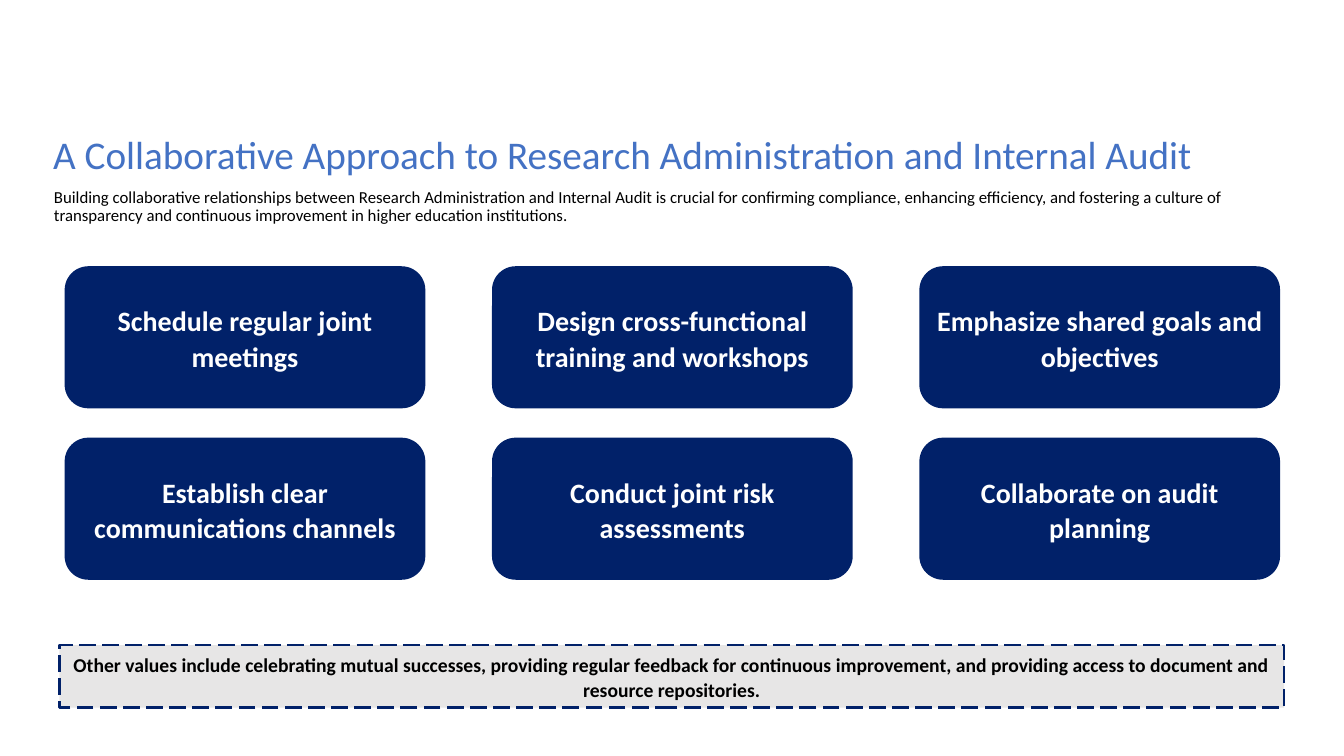
import pptx
import pptx.util
import pptx.dml.color
import pptx.enum.dml
import pptx.enum.shapes
import pptx.enum.text

Cm = pptx.util.Cm
Pt = pptx.util.Pt
Kind = pptx.enum.shapes.MSO_SHAPE
Align = pptx.enum.text.PP_ALIGN
Anchor = pptx.enum.text.MSO_ANCHOR

NAVY = "012169"
BLUE = "4472C4"
GREY = "E7E6E6"
WHITE = "FFFFFF"
BLACK = "000000"

STEPS = [
    ["Schedule regular joint meetings",
     "Design cross-functional training and workshops",
     "Emphasize shared goals and objectives"],
    ["Establish clear communications channels",
     "Conduct joint risk assessments",
     "Collaborate on audit planning"],
]


def color(code):
    return pptx.dml.color.RGBColor.from_string(code)


def write(shape, text, size, ink=BLACK, bold=False, align=Align.LEFT,
          anchor=Anchor.TOP, pitch=0.9, inset=0.25):
    frame = shape.text_frame
    frame.word_wrap = True
    frame.auto_size = pptx.enum.text.MSO_AUTO_SIZE.NONE
    frame.vertical_anchor = anchor
    frame.margin_left = frame.margin_right = Cm(0.25)
    frame.margin_top = frame.margin_bottom = Cm(inset)
    para = frame.paragraphs[0]
    para.alignment = align
    para.line_spacing = pitch
    para.space_before = Pt(0)
    run = para.add_run()
    run.text = text
    run.font.name = "Calibri"
    run.font.size = Pt(size)
    run.font.bold = bold
    run.font.color.rgb = color(ink)


def panel(slide, kind, box, text, fill, **style):
    shape = slide.shapes.add_shape(kind, *map(Cm, box))
    shape.shadow.inherit = False
    shape.fill.solid()
    shape.fill.fore_color.rgb = color(fill)
    shape.line.fill.background()
    write(shape, text, bold=True, align=Align.CENTER,
          anchor=Anchor.MIDDLE, pitch=1.06, **style)
    return shape


def header(slide, box):
    left, top, width, height = box
    title = slide.shapes.title
    title.left, title.top = Cm(left), Cm(top)
    title.width, title.height = Cm(width), Cm(height / 2)
    write(title, "A Collaborative Approach to Research Administration "
          "and Internal Audit", size=28, ink=BLUE,
          anchor=Anchor.MIDDLE, inset=0.13)
    intro = slide.shapes.add_textbox(
        Cm(left + 0.02), Cm(top + height / 2 + 0.05),
        Cm(width - 0.89), Cm(height / 2))
    write(intro, "Building collaborative relationships between Research "
          "Administration and Internal Audit is crucial for confirming "
          "compliance, enhancing efficiency, and fostering a culture of "
          "transparency and continuous improvement in higher education "
          "institutions.", size=12, inset=0.13)


def grid(slide, box, gap_x=1.68, gap_y=0.74):
    left, top, width, height = box
    rows, cols = len(STEPS), len(STEPS[0])
    wide = (width - gap_x * (cols - 1)) / cols
    high = (height - gap_y * (rows - 1)) / rows
    for row, texts in enumerate(STEPS):
        for col, text in enumerate(texts):
            place = (left + col * (wide + gap_x),
                     top + row * (high + gap_y), wide, high)
            panel(slide, Kind.ROUNDED_RECTANGLE, place, text, NAVY,
                  size=20, ink=WHITE)


def footer(slide, box):
    bar = panel(slide, Kind.RECTANGLE, box,
                "Other values include celebrating mutual successes, "
                "providing regular feedback for continuous improvement, "
                "and providing access to document and resource "
                "repositories.", GREY, size=14)
    bar.line.color.rgb = color(NAVY)
    bar.line.width = Pt(1.5)
    bar.line.dash_style = pptx.enum.dml.MSO_LINE.LONG_DASH


def main():
    deck = pptx.Presentation()
    deck.slide_width, deck.slide_height = Cm(33.87), Cm(19.05)
    slide = deck.slides.add_slide(deck.slide_layouts[5])
    header(slide, (1.09, 3.33, 31.09, 2.49))
    grid(slide, (1.63, 6.71, 30.63, 7.9))
    footer(slide, (1.5, 16.26, 30.86, 1.57))
    deck.save("out.pptx")


if __name__ == "__main__":
    main()
